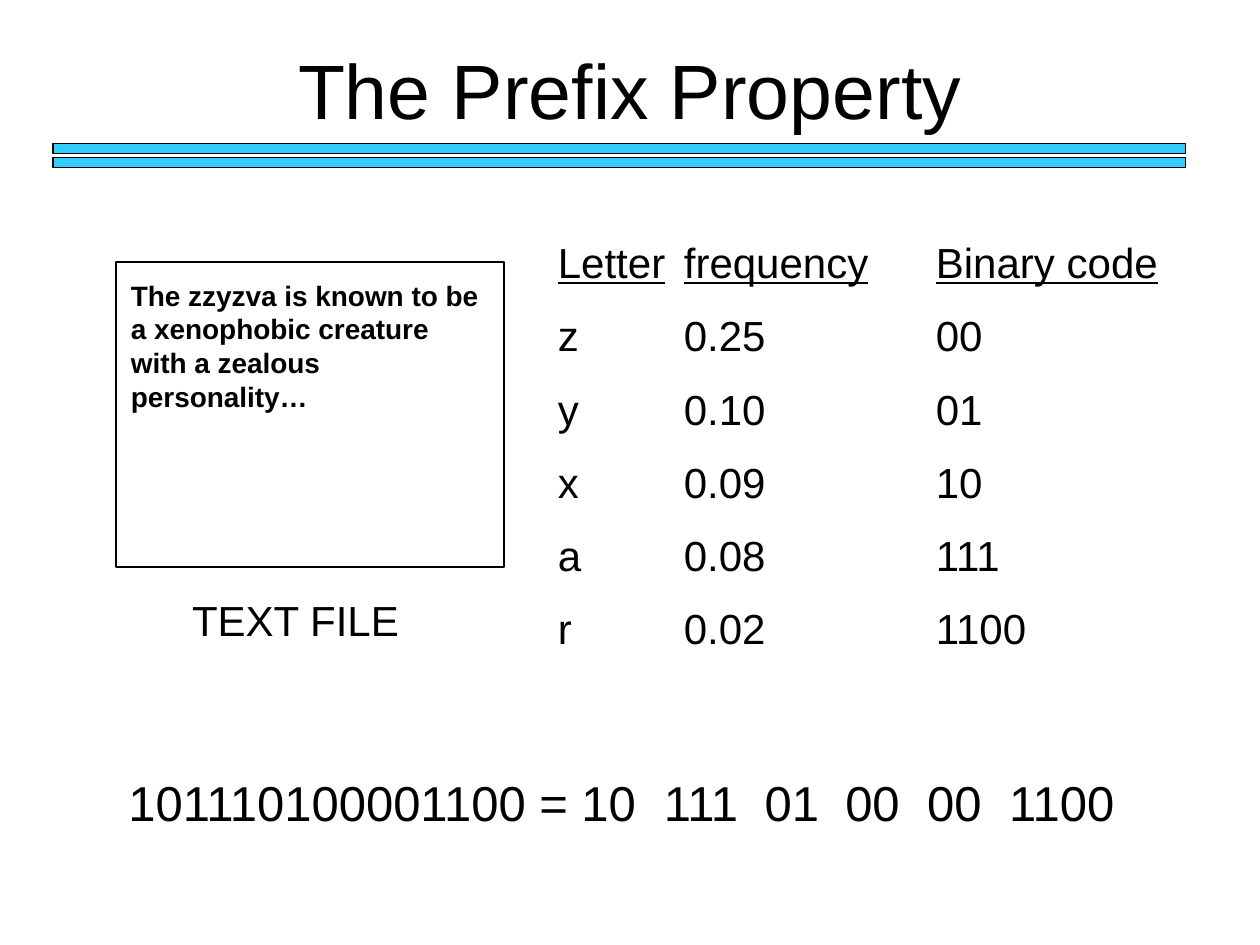
import pptx
import pptx.dml.color
import pptx.enum.shapes
import pptx.enum.text
import pptx.oxml.ns
import pptx.util
import lxml.etree

Inches = pptx.util.Inches
Pt = pptx.util.Pt
ALIGN = pptx.enum.text.PP_ALIGN
ANCHOR = pptx.enum.text.MSO_ANCHOR

FONT = "Arial"
BLACK = "000000"
BAR_BLUE = "33CCFF"

CODES = [
    ("z", "0.25", "00"),
    ("y", "0.10", "01"),
    ("x", "0.09", "10"),
    ("a", "0.08", "111"),
    ("r", "0.02", "1100"),
]


def rgb(color):
    return pptx.dml.color.RGBColor.from_string(color)


def format_run(r, size, bold=False, underline=False):
    r.font.name = FONT
    r.font.size = Pt(size)
    r.font.bold = bold
    r.font.underline = underline
    r.font.color.rgb = rgb(BLACK)


def set_tabs(p, stops):
    """Put left tab stops, in inches, on a paragraph."""
    qn = pptx.oxml.ns.qn
    tabs = lxml.etree.SubElement(p._p.get_or_add_pPr(), qn("a:tabLst"))
    for stop in stops:
        lxml.etree.SubElement(tabs, qn("a:tab"), pos=str(Inches(stop)), algn="l")


def add_text(s, box, lines, size, align=ALIGN.LEFT, wrap=True, bold=False,
             gap=0, stops=()):
    sp = s.shapes.add_textbox(*map(Inches, box))
    tf = sp.text_frame
    tf.word_wrap = wrap
    tf.text = "\n".join(lines)
    for p in tf.paragraphs:
        p.alignment = align
        p.space_after = Pt(gap)
        if stops:
            set_tabs(p, stops)
        for r in p.runs:
            format_run(r, size, bold)
    return tf


def add_rect(shapes, box, fill=None):
    sp = shapes.add_shape(pptx.enum.shapes.MSO_SHAPE.RECTANGLE, *map(Inches, box))
    sp.shadow.inherit = False
    if fill:
        sp.fill.solid()
        sp.fill.fore_color.rgb = rgb(fill)
    else:
        sp.fill.background()
    sp.line.color.rgb = rgb(BLACK)
    sp.line.width = Pt(0.75)


def set_title(s, text):
    sp = s.shapes.title
    sp.left, sp.top, sp.width, sp.height = map(Inches, (0.75, 0.08, 8.5, 1.25))
    tf = sp.text_frame
    tf.text = text
    tf.vertical_anchor = ANCHOR.MIDDLE
    p = tf.paragraphs[0]
    p.alignment = ALIGN.CENTER
    format_run(p.runs[0], 44)


def main():
    prs = pptx.Presentation()
    prs.slide_width, prs.slide_height = Inches(10), Inches(7.5)
    s = prs.slides.add_slide(prs.slide_layouts[5])

    # Title with its double rule
    set_title(s, "The Prefix Property")
    rule = s.shapes.add_group_shape()
    for top in (1.14, 1.25):
        add_rect(rule.shapes, (0.42, top, 8.99, 0.08), BAR_BLUE)

    # Text file and its caption
    add_text(s, (1.42, 4.67, 1.85, 0.5), ["TEXT FILE"], 24, ALIGN.CENTER, wrap=False)
    add_text(s, (0.94, 2.16, 2.98, 1.17),
             ["The zzyzva is known to be a xenophobic creature "
              "with a zealous personality…"], 16, bold=True)
    add_rect(s.shapes, (0.92, 2.08, 3.08, 2.42))

    # Letter codes, in tabbed columns under an underlined heading
    rows = [("Letter", "frequency", "Binary code")] + CODES
    tf = add_text(s, (4.33, 1.83, 5.33, 4.34), ["\t".join(row) for row in rows],
                  24, gap=13, stops=(1, 3))
    for r in tf.paragraphs[0].runs:
        r.font.underline = True

    # Bit string split into its codes
    words = ["101110100001100 = 10", "111", "01", "00", "00", "1100"]
    add_text(s, (0.92, 6.08, 8.21, 0.57), ["\t".join(words)], 28,
             stops=(4.25, 5.05, 5.69, 6.34, 6.99))

    prs.save("out.pptx")


if __name__ == "__main__":
    main()
